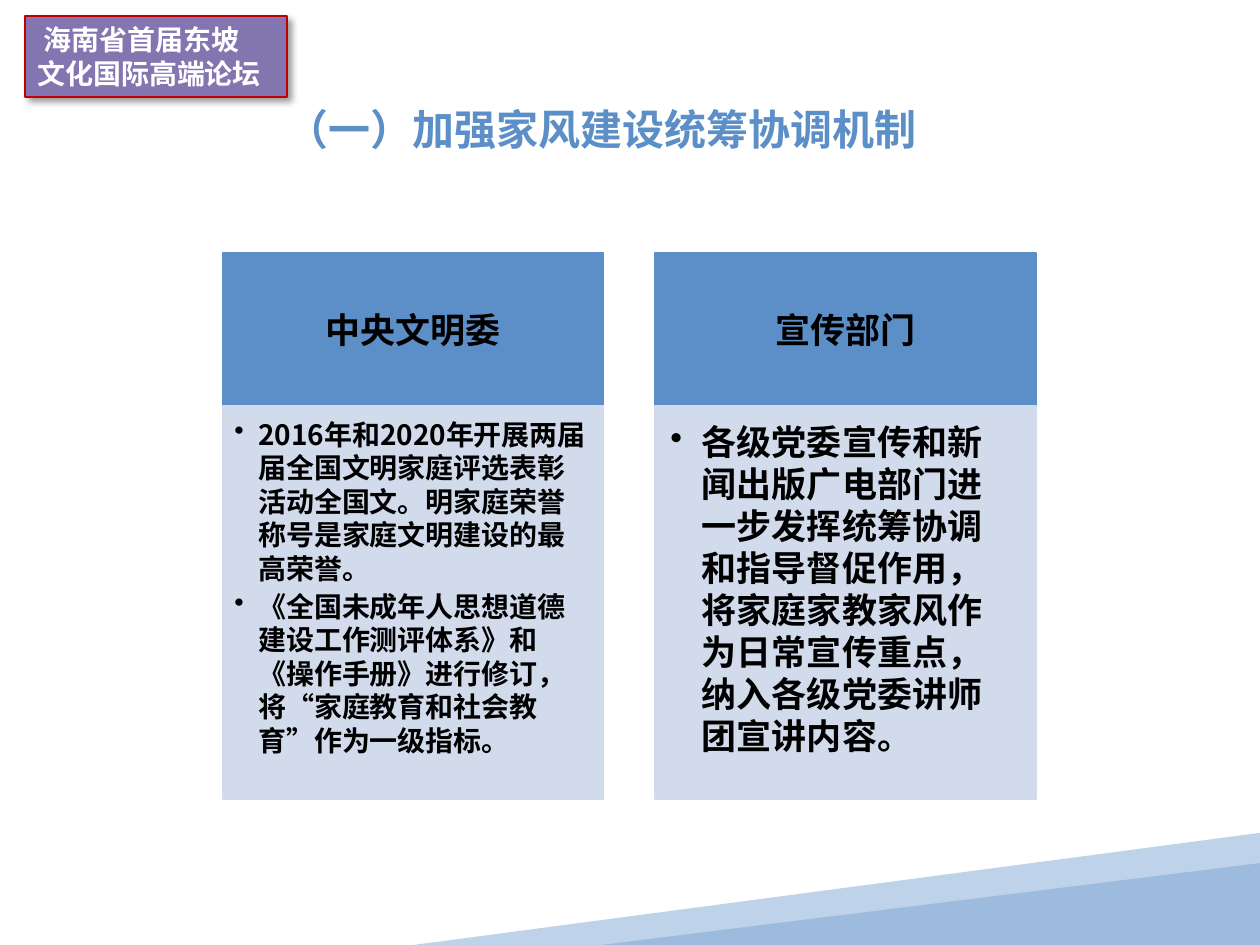
from lxml.etree import SubElement
from pptx import Presentation
from pptx.dml.color import RGBColor
from pptx.enum.shapes import MSO_SHAPE
from pptx.enum.text import MSO_ANCHOR, MSO_AUTO_SIZE, PP_ALIGN
from pptx.oxml.ns import qn
from pptx.util import Inches, Pt

FONT = "Noto Sans CJK SC"
BLUE, PALE = "5C8FC7", "D2DBEB"
TOP, HEAD, BODY, WIDE = 2.01, 1.21, 3.12, 3.02
LEFT, STEP = 1.77, 3.43

# Heading, text size, hanging indent, insets, bullet texts
CARDS = [
    ("中央文明委", 16, 0.19, (0.09, 0.09, 0.12, 0.14), [
        "2016年和2020年开展两届届全国文明家庭评选表彰活动全国文。"
        "明家庭荣誉称号是家庭文明建设的最高荣誉。",
        "《全国未成年人思想道德建设工作测评体系》和《操作手册》进行修订，"
        "将“家庭教育和社会教育”作为一级指标。"]),
    ("宣传部门", 20, 0.25, (0.12, 0.12, 0.16, 0.17), [
        "各级党委宣传和新闻出版广电部门进一步发挥统筹协调和指导督促作用，"
        "将家庭家教家风作为日常宣传重点，纳入各级党委讲师团宣讲内容。"]),
]


def color(code):
    return RGBColor.from_string(code)


def paint(shape, fill, line=None):
    shape.shadow.inherit = False
    shape.fill.solid()
    shape.fill.fore_color.rgb = color(fill)
    if line:
        shape.line.color.rgb = color(line)
        shape.line.width = Pt(1)
    else:
        shape.line.fill.background()


def add_box(slide, spot, fill, line=None, kind=MSO_SHAPE.RECTANGLE):
    box = slide.shapes.add_shape(kind, *map(Inches, spot))
    paint(box, fill, line)
    return box


def write(frame, texts, size, ink, align=PP_ALIGN.LEFT, anchor=MSO_ANCHOR.TOP,
          insets=(0.1, 0.05, 0.1, 0.05), hang=0):
    """Fill a frame with paragraphs; a hang above zero makes them bullets."""
    frame.word_wrap = True
    frame.auto_size = MSO_AUTO_SIZE.NONE
    frame.vertical_anchor = anchor
    (frame.margin_left, frame.margin_top,
     frame.margin_right, frame.margin_bottom) = map(Inches, insets)
    for i, text in enumerate(texts):
        para = frame.add_paragraph() if i else frame.paragraphs[0]
        if hang:
            props = para._p.get_or_add_pPr()
            props.set("marL", str(Inches(hang)))
            props.set("indent", str(Inches(-hang)))
            SubElement(props, qn("a:buChar"), char="•")
            para.level = 1
            para.space_after = Pt(size * 0.15)
        para.alignment = align
        run = para.add_run()
        run.text = text
        run.font.size = Pt(size)
        run.font.bold = True
        run.font.name = FONT
        run.font.color.rgb = color(ink)
        SubElement(run._r.get_or_add_rPr(), qn("a:ea"), typeface=FONT)


def add_decor(slide):
    points = [(10, 6.61), (10, 7.44), (6.73, 7.5), (3.28, 7.5)]
    first, *rest = [(Inches(x), Inches(y)) for x, y in points]
    pen = slide.shapes.build_freeform(*first)
    pen.add_line_segments(rest, close=True)
    paint(pen.convert_to_shape(), "BED2E9")
    wedge = add_box(slide, (4.77, 6.85, 5.23, 0.65), "9DBCDD",
                    kind=MSO_SHAPE.ISOSCELES_TRIANGLE)
    wedge.adjustments[0] = 1


def add_title(slide, text):
    title = slide.shapes.title
    title.left, title.top = Inches(2.17), Inches(0.77)
    title.width, title.height = Inches(6.28), Inches(0.91)
    write(title.text_frame, [text], 24, BLUE)


def add_card(slide, left, name, size, hang, insets, texts):
    head = add_box(slide, (left, TOP, WIDE, HEAD), BLUE, BLUE)
    write(head.text_frame, [name], 20, "000000", PP_ALIGN.CENTER,
          MSO_ANCHOR.MIDDLE, (0.16, 0.09, 0.16, 0.09))
    body = add_box(slide, (left, TOP + HEAD, WIDE, BODY), PALE, PALE)
    write(body.text_frame, texts, size, "000000", insets=insets, hang=hang)


def add_badge(slide, lines):
    badge = add_box(slide, (0.2, 0.13, 2.08, 0.64), "8376B0", "C00000")
    effects = badge._element.spPr.find(qn("a:effectLst"))
    shade = SubElement(effects, qn("a:outerShdw"), blurRad=str(Pt(4)),
                       dist=str(Pt(3)), dir="2700000", algn="tl",
                       rotWithShape="0")
    tone = SubElement(shade, qn("a:srgbClr"), val="000000")
    SubElement(tone, qn("a:alpha"), val="40000")
    write(badge.text_frame, lines, 16, "FFFFFF")


def main():
    deck = Presentation()
    deck.slide_width, deck.slide_height = Inches(10), Inches(7.5)
    slide = deck.slides.add_slide(deck.slide_layouts[5])
    add_decor(slide)
    for i, card in enumerate(CARDS):
        add_card(slide, LEFT + i * STEP, *card)
    add_badge(slide, [" 海南省首届东坡", "文化国际高端论坛"])
    add_title(slide, "（一）加强家风建设统筹协调机制")
    deck.save("out.pptx")


if __name__ == "__main__":
    main()
